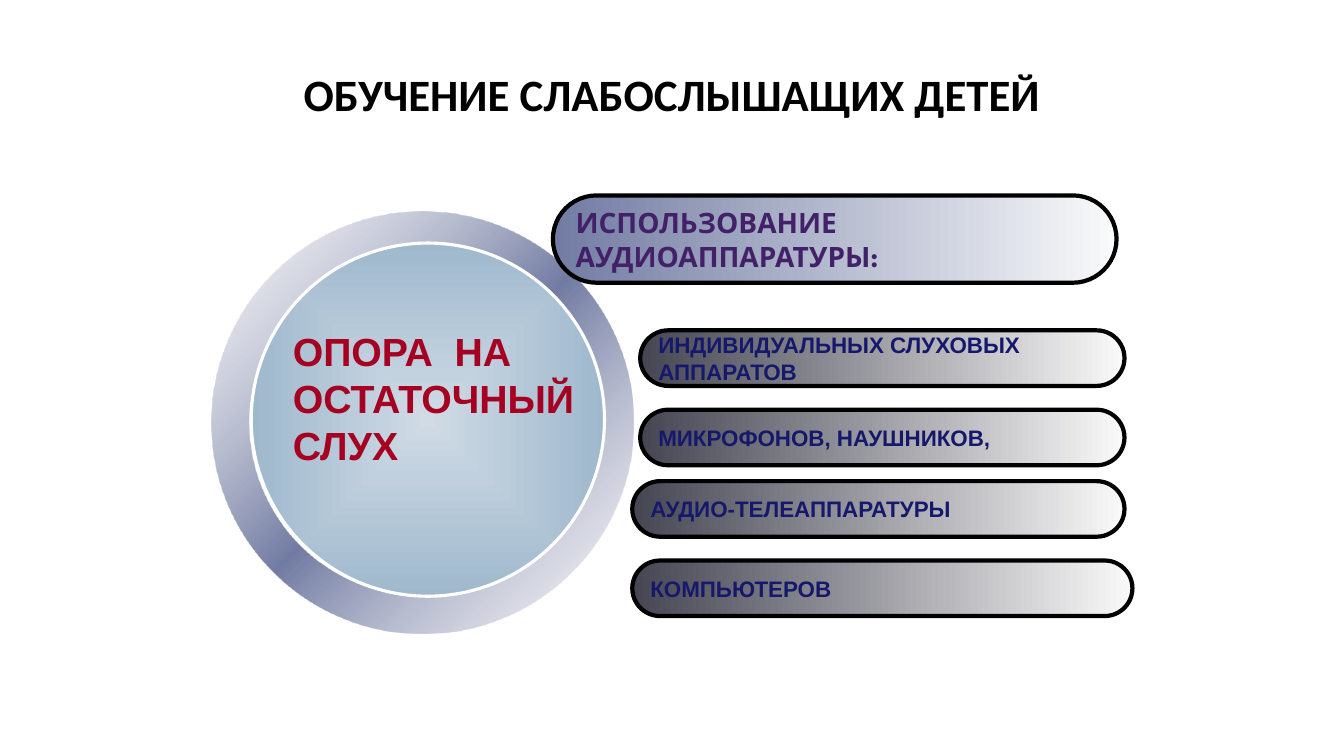
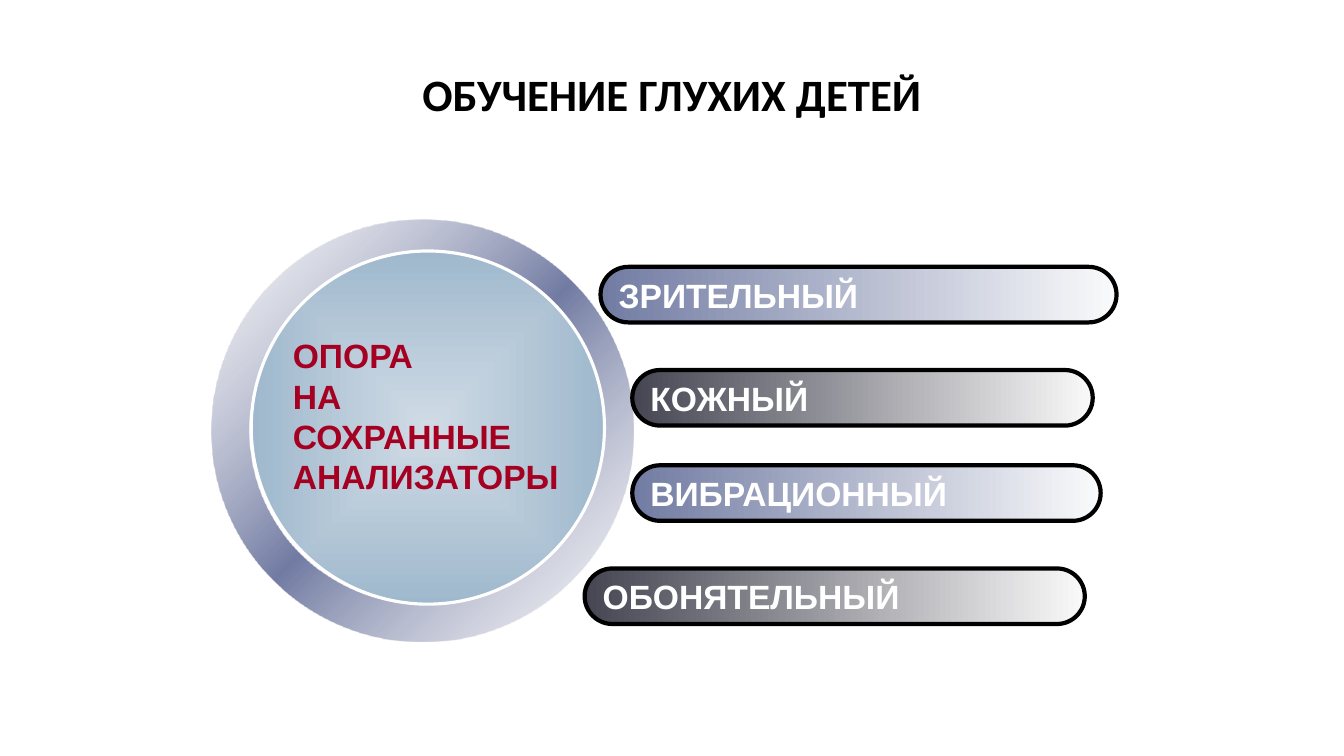
from dataclasses import dataclass

from pptx import Presentation
from pptx.dml.color import RGBColor
from pptx.enum.shapes import MSO_SHAPE
from pptx.enum.text import MSO_ANCHOR, PP_ALIGN
from pptx.oxml import parse_xml
from pptx.oxml.ns import nsdecls, qn
from pptx.util import Inches, Mm, Pt


@dataclass(frozen=True)
class Theme:
    black: str = "000000"
    white: str = "FFFFFF"
    red: str = "A50021"
    plum: str = "432169"
    navy: str = "16186C"
    blue: tuple = (("727CA3", 100), ("F9FAFB", 100))
    gray: tuple = (("464653", 100), ("F9F9F9", 100))
    rim: tuple = (("BBBECE", 12), ("727CA3", 100), ("BBBECE", 12))
    sky: tuple = (("D0DBE5", 100), ("9FB8CD", 100))
    sans: str = "Arial"
    head: str = "Calibri"
    wide: str = "League Spartan"
    title: int = 32
    large: int = 28
    mid: int = 24
    lead: int = 20
    small: int = 16
    edge: float = 3
    thin: float = 2.25
    lines: float = 1.2
    step: int = 2


class Deck:
    def __init__(self, theme):
        self.theme = theme
        self.show = Presentation()
        self.show.slide_width = Inches(13.33)
        self.show.slide_height = Inches(7.5)
        self.slide = None

    def grid(self, col, row, wide, high):
        step = self.theme.step
        return (self.show.slide_width // 2 + Mm(col * step),
                self.show.slide_height // 2 + Mm(row * step),
                Mm(wide * step), Mm(high * step))

    def page(self, text):
        self.slide = self.show.slides.add_slide(self.show.slide_layouts[5])
        title = self.slide.shapes.title
        title.left, title.top, title.width, title.height = self.grid(
            -76.2, -43.8, 152.4, 15.9)
        theme = self.theme
        title.text_frame.vertical_anchor = MSO_ANCHOR.MIDDLE
        self.label(title.text_frame, [text], theme.title, theme.black,
                   theme.head, PP_ALIGN.CENTER)

    def label(self, frame, rows, size, color, face, align=PP_ALIGN.LEFT):
        frame.word_wrap = True
        for num, row in enumerate(rows):
            para = frame.add_paragraph() if num else frame.paragraphs[0]
            para.alignment = align
            para.line_spacing = Pt(size * self.theme.lines)
            run = para.add_run()
            run.text = row
            font = run.font
            font.size, font.bold = Pt(size), True
            font.color.rgb = RGBColor.from_string(color)
            font.name = face

    def shade(self, frame):
        for para in frame.paragraphs:
            for run in para.runs:
                fill = run._r.rPr.find(qn("a:solidFill"))
                fill.addnext(parse_xml(
                    f'<a:effectLst {nsdecls("a")}>'
                    '<a:outerShdw dist="35921" dir="2700000">'
                    f'<a:srgbClr val="{self.theme.black}"/>'
                    '</a:outerShdw></a:effectLst>'))

    def blend(self, shape, stops, flow):
        last = len(stops) - 1
        marks = "".join(
            f'<a:gs pos="{num * 100000 // last}"><a:srgbClr val="{color}">'
            f'<a:alpha val="{alpha * 1000}"/></a:srgbClr></a:gs>'
            for num, (color, alpha) in enumerate(stops))
        shape.fill.background()
        props = shape._element.spPr
        props.replace(props.find(qn("a:noFill")), parse_xml(
            f'<a:gradFill {nsdecls("a")} rotWithShape="1">'
            f'<a:gsLst>{marks}</a:gsLst>{flow}</a:gradFill>'))

    def shape(self, kind, spot, stops, angle=0, line=None, width=0, flow=None):
        shape = self.slide.shapes.add_shape(kind, *self.grid(*spot))
        shape.shadow.inherit = False
        self.blend(shape, stops,
                   flow or f'<a:lin ang="{angle * 60000}" scaled="0"/>')
        if line:
            shape.line.color.rgb = RGBColor.from_string(line)
            shape.line.width = Pt(width)
        else:
            shape.line.fill.background()
        return shape

    def wheel(self, row, rows, size):
        theme = self.theme
        ring = self.shape(MSO_SHAPE.DONUT, (-58, row, 53.2, 53.2),
                          theme.rim, 45)
        ring.adjustments[0] = 0.09
        self.shape(MSO_SHAPE.OVAL, (-53, row + 4, 44.5, 44.5), theme.sky,
                   line=theme.white, width=theme.thin,
                   flow='<a:path path="shape"><a:fillToRect l="50000" '
                        't="50000" r="50000" b="50000"/></a:path>')
        box = self.slide.shapes.add_textbox(*self.grid(-49, row + 14, 40, 22))
        self.label(box.text_frame, rows, size, theme.red, theme.sans)
        self.shade(box.text_frame)

    def bar(self, spot, rows, stops, size, color, face):
        theme = self.theme
        bar = self.shape(MSO_SHAPE.ROUNDED_RECTANGLE, spot, stops,
                         line=theme.black, width=theme.edge)
        bar.adjustments[0] = 0.5
        bar.text_frame.vertical_anchor = MSO_ANCHOR.MIDDLE
        self.label(bar.text_frame, rows, size, color, face)


def main():
    theme = Theme()
    deck = Deck(theme)

    deck.page("ОБУЧЕНИЕ СЛАБОСЛЫШАЩИХ ДЕТЕЙ")
    deck.wheel(-21, ["ОПОРА  НА", "ОСТАТОЧНЫЙ", "СЛУХ"], theme.large)
    deck.bar((-15, -23, 71, 11), ["ИСПОЛЬЗОВАНИЕ", "АУДИОАППАРАТУРЫ:"],
             theme.blue, theme.lead, theme.plum, theme.wide)
    for col, row, wide, rows in (
            (-4, -6, 61, ["ИНДИВИДУАЛЬНЫХ СЛУХОВЫХ", "АППАРАТОВ"]),
            (-4, 4, 61, ["МИКРОФОНОВ, НАУШНИКОВ,"]),
            (-5, 13, 62, ["АУДИО-ТЕЛЕАППАРАТУРЫ"]),
            (-5, 23, 63, ["КОМПЬЮТЕРОВ"])):
        deck.bar((col, row, wide, 7), rows, theme.gray, theme.small,
                 theme.navy, theme.sans)

    deck.page("ОБУЧЕНИЕ ГЛУХИХ ДЕТЕЙ")
    deck.wheel(-20, ["ОПОРА", "НА", "СОХРАННЫЕ", "АНАЛИЗАТОРЫ"], theme.mid)
    for col, row, wide, text, stops in (
            (-9, -14, 65, "ЗРИТЕЛЬНЫЙ", theme.blue),
            (-5, -1, 58, "КОЖНЫЙ", theme.gray),
            (-5, 11, 59, "ВИБРАЦИОННЫЙ", theme.blue),
            (-11, 24, 63, "ОБОНЯТЕЛЬНЫЙ", theme.gray)):
        deck.bar((col, row, wide, 7), [text], stops, theme.mid,
                 theme.white, theme.sans)

    deck.show.save("out.pptx")


if __name__ == "__main__":
    main()
